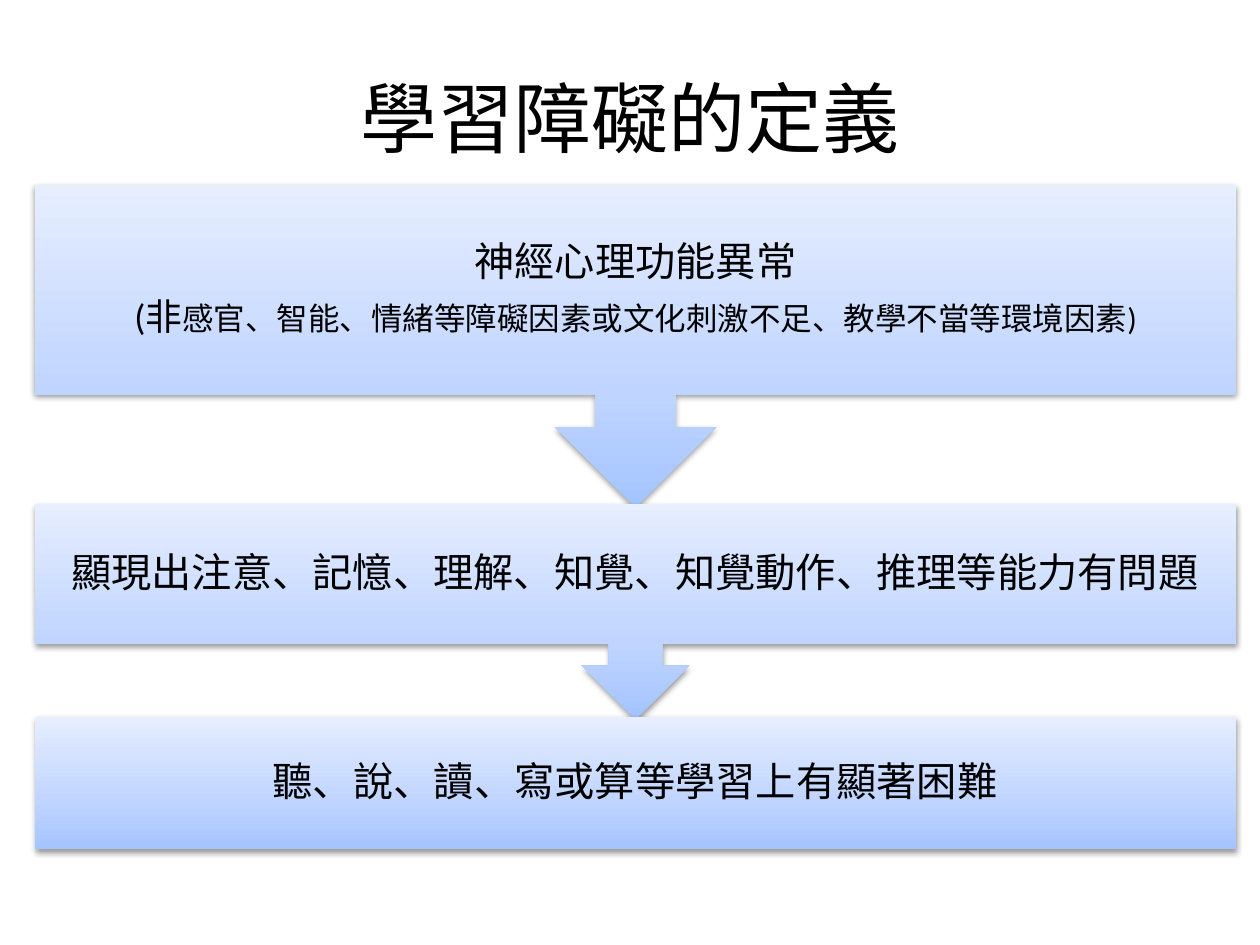
from dataclasses import dataclass

from lxml.etree import SubElement
from pptx import Presentation
from pptx.dml.color import RGBColor as RGB
from pptx.enum.shapes import MSO_SHAPE as Shape
from pptx.enum.text import MSO_ANCHOR as Anchor, PP_ALIGN as Align
from pptx.oxml.ns import qn
from pptx.util import Inches, Pt


@dataclass(frozen=True)
class Theme:
    font: str = "Calibri"
    text: str = "000000"
    shadow: str = "000000"
    gradient: tuple = ((0, "A4C4FF"), (35, "BFD4FF"), (100, "E6EEFF"))
    title: float = 44
    body: float = 23
    note_lead: float = 21
    note: float = 18


THEME = Theme()
WIDTH, HEIGHT = 10, 7.5

# Each step: outline, share of the flow's top, share of its height, lines of (text, size)
STEPS = [
    (Shape.DOWN_ARROW_CALLOUT, 0, 2.56,
     [[("神經心理功能異常", THEME.body)],
      [("(非", THEME.note_lead),
       ("感官、智能、情緒等障礙因素或文化刺激不足、教學不當等環境因素)", THEME.note)]]),
    (Shape.DOWN_ARROW_CALLOUT, 2.53, 1.71,
     [[("顯現出注意、記憶、理解、知覺、知覺動作、推理等能力有問題", THEME.body)]]),
    (Shape.RECTANGLE, 4.22, 1.05,
     [[("聽、說、讀、寫或算等學習上有顯著困難", THEME.body)]]),
]
FLOW_ROWS = 5.27


def write(frame, lines, margin=0.1, spacing=None, after=None):
    """Fill a text frame with centred lines made of (text, size) spans."""
    frame.word_wrap = True
    frame.vertical_anchor = Anchor.MIDDLE
    frame.margin_left = frame.margin_right = Inches(margin)
    frame.margin_top = frame.margin_bottom = Inches(min(margin, 0.18))
    for index, line in enumerate(lines):
        para = frame.add_paragraph() if index else frame.paragraphs[0]
        para.alignment = Align.CENTER
        para.line_spacing = spacing
        para.space_after = after
        for text, size in line:
            span = para.add_run()
            span.text = text
            span.font.name = THEME.font
            span.font.size = Pt(size)
            span.font.color.rgb = RGB.from_string(THEME.text)


def paint(shape):
    """Give a step its upward gradient and soft shadow, without an outline."""
    shape.line.fill.background()
    shape.fill.gradient()
    shape.fill.gradient_angle = 90
    properties = shape.element.spPr
    stops = properties.find(qn("a:gradFill")).find(qn("a:gsLst"))
    for stop in list(stops):
        stops.remove(stop)
    for position, color in THEME.gradient:
        stop = SubElement(stops, qn("a:gs"), pos=str(position * 1000))
        SubElement(stop, qn("a:srgbClr"), val=color)

    shape.shadow.inherit = False
    effects = properties.find(qn("a:effectLst"))
    shadow = SubElement(effects, qn("a:outerShdw"), blurRad=str(Pt(3.1)),
                        dist=str(Pt(1.6)), dir="5400000", rotWithShape="0")
    color = SubElement(shadow, qn("a:srgbClr"), val=THEME.shadow)
    SubElement(color, qn("a:alpha"), val="38000")


def add_title(page, left, top, width, height):
    box = page.shapes.add_textbox(*map(Inches, (left, top, width, height)))
    write(box.text_frame, [[("學習障礙的定義", THEME.title)]])


def add_flow(page, left, top, width, height):
    row = height / FLOW_ROWS
    for outline, start, rows, lines in STEPS:
        place = (left, top + start * row, width, rows * row)
        step = page.shapes.add_shape(outline, *map(Inches, place))
        paint(step)
        write(step.text_frame, lines, margin=0.18, spacing=0.9, after=Pt(8))


def main():
    deck = Presentation()
    deck.slide_width, deck.slide_height = Inches(WIDTH), Inches(HEIGHT)
    page = deck.slides.add_slide(deck.slide_layouts[6])
    add_title(page, WIDTH * 0.05, HEIGHT * 0.04, WIDTH * 0.9, HEIGHT / 6)
    add_flow(page, 0.28, 1.47, 9.53, FLOW_ROWS)
    deck.save("out.pptx")


if __name__ == "__main__":
    main()
